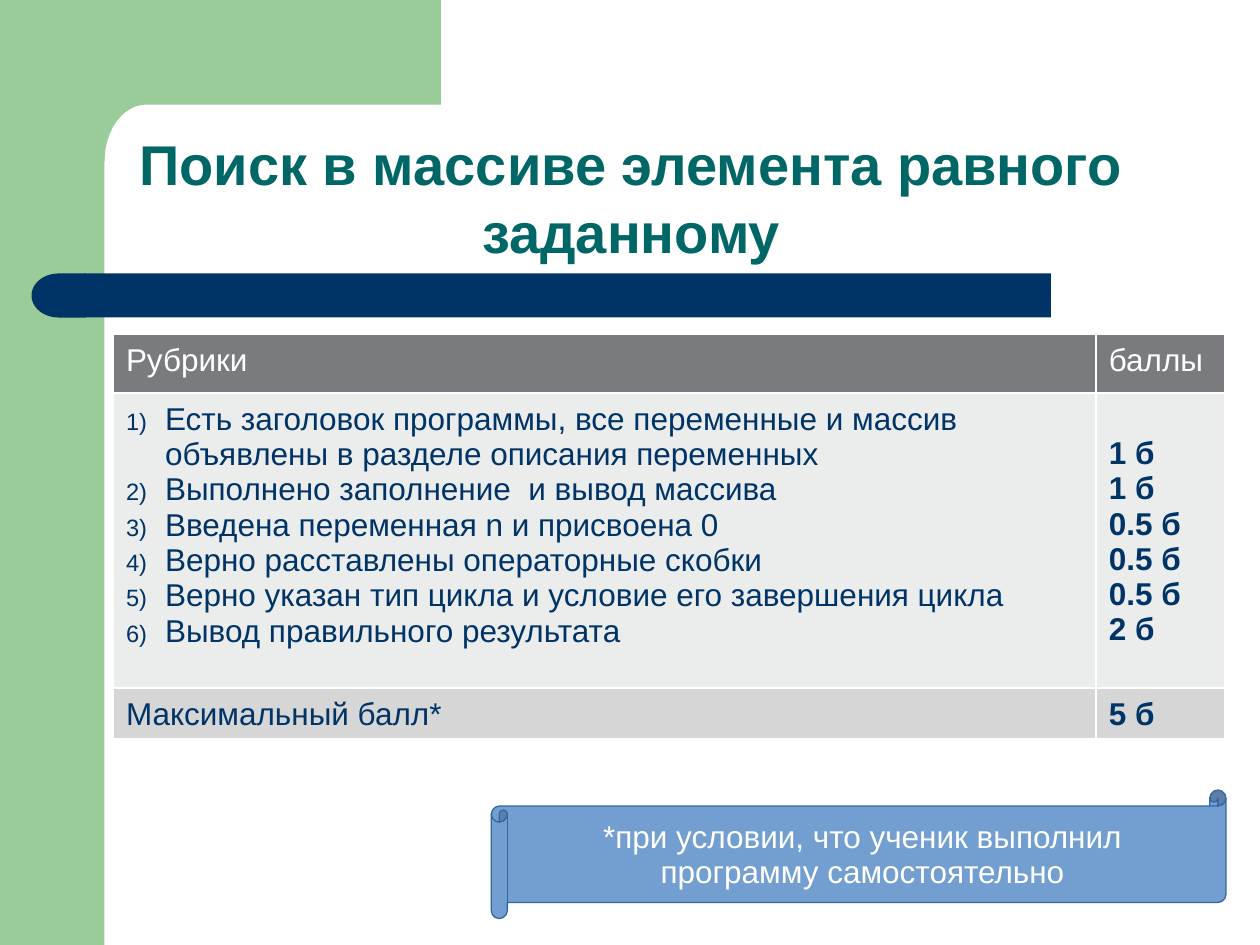
from math import cos, pi, sin

from lxml.etree import SubElement
from pptx import Presentation
from pptx.dml.color import RGBColor
from pptx.enum.shapes import MSO_SHAPE
from pptx.enum.text import MSO_ANCHOR, MSO_AUTO_SIZE, PP_ALIGN
from pptx.oxml import parse_xml
from pptx.oxml.ns import nsdecls, qn
from pptx.util import Inches, Pt

GREEN = RGBColor(0x99, 0xCC, 0x99)
NAVY = RGBColor(0x00, 0x33, 0x66)
TEAL = RGBColor(0x00, 0x66, 0x66)
WHITE = RGBColor(0xFF, 0xFF, 0xFF)
HEADER = RGBColor(0x79, 0x7B, 0x7E)
BODY = RGBColor(0xEB, 0xEC, 0xEC)
TOTAL = RGBColor(0xD6, 0xD6, 0xD7)
SCROLL = RGBColor(0x72, 0x9F, 0xCF)
SCROLL_LINE = RGBColor(0x34, 0x65, 0xA4)


def paint(sp, color):
    """Give a shape a flat fill with no outline and no shadow."""
    sp.shadow.inherit = False
    sp.fill.solid()
    sp.fill.fore_color.rgb = color
    sp.line.fill.background()


def add_run(p, text, size, color, bold=False):
    r = p.add_run()
    r.text = text
    r.font.name = "Arial"
    r.font.size = Pt(size)
    r.font.bold = bold
    r.font.color.rgb = color


prs = Presentation()
prs.slide_width, prs.slide_height = Inches(10), Inches(7.5)
s = prs.slides.add_slide(prs.slide_layouts[5])

# Green frame with a rounded inner corner
band = s.shapes.add_shape(MSO_SHAPE.RECTANGLE, 0, 0, Inches(0.83), Inches(7.5))
paint(band, GREEN)
steps = 12
corner = [(1.16 - 0.33 * sin(i * pi / 2 / steps), 1.28 - 0.45 * cos(i * pi / 2 / steps))
          for i in range(steps + 1)]
outline = [(3.5, 0.83)] + corner + [(0.5, 1.28), (0.5, 0)]
builder = s.shapes.build_freeform(Inches(3.5), 0)
builder.add_line_segments([(Inches(x), Inches(y)) for x, y in outline])
paint(builder.convert_to_shape(), GREEN)

# Navy bar under the title
bar = s.shapes.add_shape(MSO_SHAPE.RECTANGLE, Inches(0.67), Inches(2.17), Inches(7.67), Inches(0.35))
paint(bar, NAVY)
cap = s.shapes.add_shape(MSO_SHAPE.FLOWCHART_DELAY, Inches(0.25), Inches(2.17), Inches(0.43), Inches(0.35))
cap.rotation = 180
paint(cap, NAVY)

title = s.shapes.title
title.left, title.top, title.width, title.height = (Inches(v) for v in (0.9, 1.15, 8.22, 0.83))
tf = title.text_frame
tf.auto_size = MSO_AUTO_SIZE.NONE
tf.vertical_anchor = MSO_ANCHOR.MIDDLE
p = tf.paragraphs[0]
p.alignment = PP_ALIGN.CENTER
add_run(p, "Поиск в массиве элемента равного заданному", 32, TEAL, True)

# Scoring table
criteria = [
    "Есть заголовок программы, все переменные и массив объявлены в разделе описания переменных",
    "Выполнено заполнение  и вывод массива",
    "Введена переменная n и присвоена 0",
    "Верно расставлены операторные скобки",
    "Верно указан тип цикла и условие его завершения цикла",
    "Вывод правильного результата",
]
scores = ["1 б", "1 б", "0.5 б", "0.5 б", "0.5 б", "2 б"]
rows = [
    (0.47, HEADER, WHITE, ["Рубрики"], ["баллы"]),
    (2.34, BODY, NAVY, criteria, scores),
    (0.4, TOTAL, NAVY, ["Максимальный балл*"], ["5 б"]),
]
table = s.shapes.add_table(3, 2, Inches(0.9), Inches(2.65), Inches(8.82), Inches(3.21)).table
table.first_row = table.horz_banding = False
table.columns[0].width, table.columns[1].width = Inches(7.8), Inches(1.02)
for i, (height, fill, color, *texts) in enumerate(rows):
    table.rows[i].height = Inches(height)
    for j, lines in enumerate(texts):
        cell = table.cell(i, j)
        # Scores start level with the second line of the first criterion
        cell.margin_top = Inches(0.34 if lines is scores else 0.07)
        tcPr = cell._tc.get_or_add_tcPr()
        for side in ("lnL", "lnR", "lnT", "lnB"):
            tcPr.append(parse_xml(
                f'<a:{side} {nsdecls("a")} w="12192"><a:solidFill>'
                f'<a:srgbClr val="{WHITE}"/></a:solidFill></a:{side}>'))
        cell.fill.solid()
        cell.fill.fore_color.rgb = fill
        tf = cell.text_frame
        for k, text in enumerate(lines):
            p = tf.paragraphs[0] if k == 0 else tf.add_paragraph()
            if lines is criteria:
                pPr = p._p.get_or_add_pPr()
                pPr.set("marL", str(Inches(0.31)))
                pPr.set("indent", str(Inches(-0.31)))
                SubElement(SubElement(pPr, qn("a:buClr")), qn("a:srgbClr"), val=str(NAVY))
                SubElement(pPr, qn("a:buSzPct"), val="75000")
                SubElement(pPr, qn("a:buFont"), typeface="Arial")
                SubElement(pPr, qn("a:buAutoNum"), type="arabicParenR")
            add_run(p, text, 18, color, bold=i > 0 and j == 1)

# Footnote scroll
scroll = s.shapes.add_shape(MSO_SHAPE.HORIZONTAL_SCROLL, Inches(3.9), Inches(6.27), Inches(5.83), Inches(1.02))
paint(scroll, SCROLL)
scroll.line.color.rgb = SCROLL_LINE
scroll.line.width = Pt(0.75)
tf = scroll.text_frame
tf.word_wrap = True
tf.vertical_anchor = MSO_ANCHOR.MIDDLE
tf.margin_top = Inches(0.07)
p = tf.paragraphs[0]
p.alignment = PP_ALIGN.CENTER
p.line_spacing = 0.93
add_run(p, "*при условии, что ученик выполнил программу самостоятельно", 18, WHITE)

prs.save("out.pptx")
